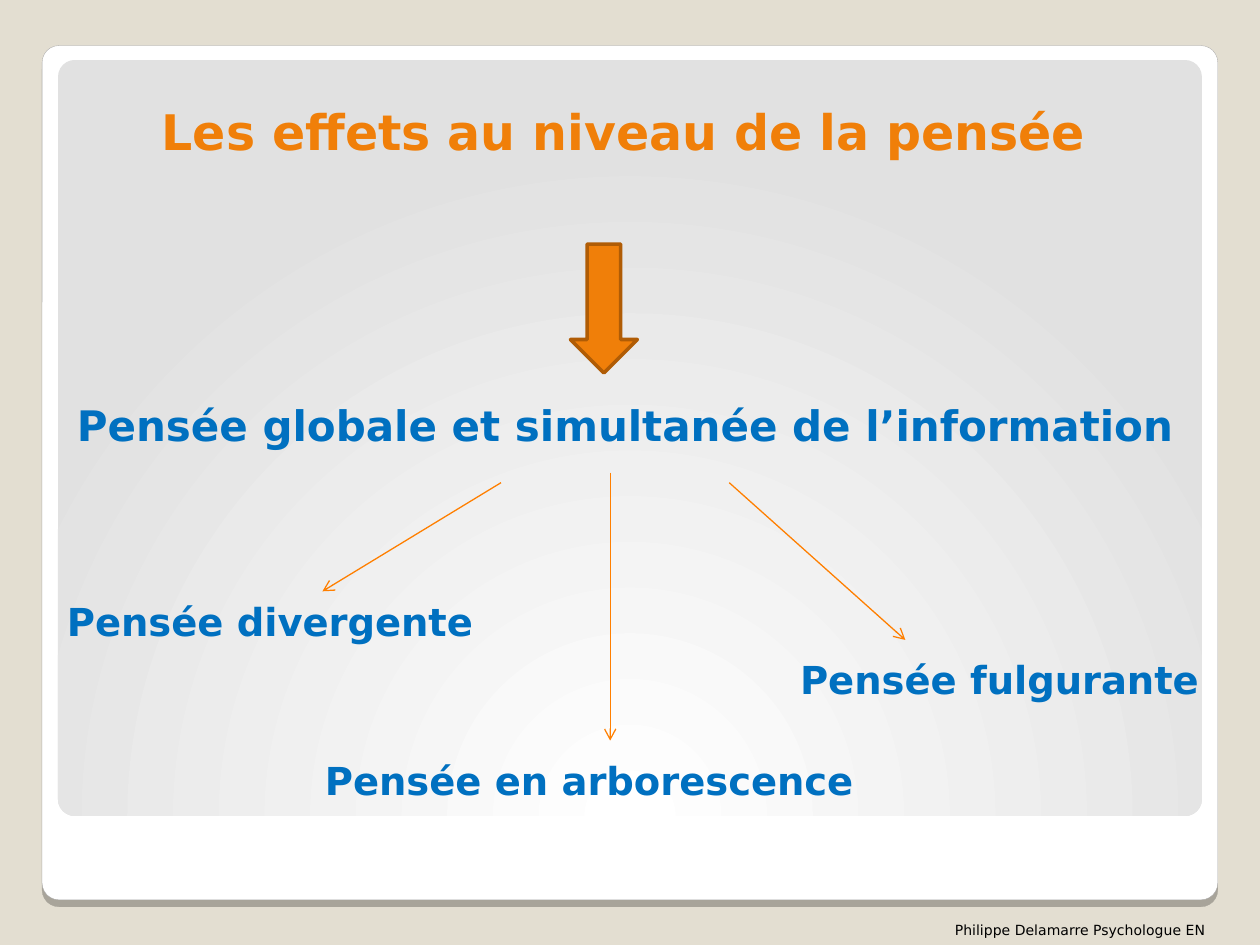
"""Build a slide on the effects on thinking, with one idea leading to three."""
from dataclasses import dataclass

from lxml.etree import SubElement
from pptx import Presentation
from pptx.dml.color import RGBColor
from pptx.enum.shapes import MSO_CONNECTOR as Link, MSO_SHAPE as Preset
from pptx.enum.text import MSO_ANCHOR as Anchor, MSO_AUTO_SIZE as AutoSize, PP_ALIGN as Align
from pptx.oxml.ns import qn
from pptx.util import Cm, Pt


@dataclass(frozen=True)
class Theme:
    """Hold the font, colours and type sizes of the slide."""
    font: str = "DejaVu Sans"
    backdrop: str = "E3DED1"
    frame: str = "FFFFFF"
    frame_edge: str = "A4A3A3"
    frame_shadow: str = "000000"
    panel_edge: str = "E1E1E1"
    accent: str = "F07F09"
    accent_edge: str = "B05C05"
    branch: str = "FF7F00"
    idea: str = "0070C0"
    credit: str = "000000"
    title_size: int = 28
    main_size: int = 24
    idea_size: int = 22
    credit_size: int = 8


THEME = Theme()
CORNER = 0.34


def rgb(value):
    """Turn a hex string into a colour."""
    return RGBColor.from_string(value)


def add_xml(parent, tag, **attributes):
    """Append a DrawingML element and return it."""
    return SubElement(parent, qn(tag), {key: str(value) for key, value in attributes.items()})


def place(shape, box):
    """Move and size a shape to a box in centimetres."""
    shape.left, shape.top, shape.width, shape.height = map(Cm, box)


def write(shape, text, *, size, color, bold=True, align=Align.LEFT, anchor=Anchor.TOP):
    """Put one formatted paragraph into a shape."""
    frame = shape.text_frame
    frame.word_wrap = True
    frame.auto_size = AutoSize.NONE
    frame.vertical_anchor = anchor
    paragraph = frame.paragraphs[0]
    paragraph.alignment = align
    run = paragraph.add_run()
    run.text = text
    run.font.name, run.font.size, run.font.bold = THEME.font, Pt(size), bold
    run.font.color.rgb = rgb(color)


def add_label(slide, text, box, **style):
    """Add a text box with one formatted line."""
    label = slide.shapes.add_textbox(*map(Cm, box))
    write(label, text, **style)


def add_preset(slide, preset, box, fill, edge=None, edge_width=0):
    """Add a filled preset shape with an optional outline."""
    shape = slide.shapes.add_shape(preset, *map(Cm, box))
    shape.shadow.inherit = False
    shape.fill.solid()
    shape.fill.fore_color.rgb = rgb(fill)
    if edge:
        shape.line.color.rgb = rgb(edge)
        shape.line.width = Pt(edge_width)
    else:
        shape.line.fill.background()
    return shape


def add_panel(slide, box, fill, **outline):
    """Add a rounded panel with the common corner radius."""
    panel = add_preset(slide, Preset.ROUNDED_RECTANGLE, box, fill, **outline)
    panel.adjustments[0] = CORNER / min(box[2:])
    return panel


def drop_shadow(shape):
    """Give a shape a hard shadow straight below it."""
    effects = shape.element.spPr.find(qn("a:effectLst"))
    shadow = add_xml(effects, "a:outerShdw", blurRad=0, dist=Pt(4), dir=5400000,
                     algn="tl", rotWithShape=0)
    add_xml(add_xml(shadow, "a:srgbClr", val=THEME.frame_shadow), "a:alpha", val=25000)


def glow_from_below(shape, inner, outer):
    """Fill a shape with a circular gradient centred below it."""
    shape.fill.gradient()
    for stop, color in zip(shape.fill.gradient_stops, (inner, outer)):
        stop.color.rgb = rgb(color)
    gradient = shape.element.spPr.find(qn("a:gradFill"))
    gradient.remove(gradient.find(qn("a:lin")))
    circle = add_xml(gradient, "a:path", path="circle")
    add_xml(circle, "a:fillToRect", l=50000, t=175000, r=50000, b=-75000)


def add_branch(slide, start, end):
    """Add a thin arrow between two points."""
    branch = slide.shapes.add_connector(Link.STRAIGHT, *map(Cm, (*start, *end)))
    branch.line.color.rgb = rgb(THEME.branch)
    branch.line.width = Pt(0.75)
    properties = branch.element.spPr
    add_xml(properties.find(qn("a:ln")), "a:tailEnd", type="arrow")
    add_xml(properties, "a:effectLst")


def add_background(slide):
    """Paint the backdrop, the white frame and the grey panel."""
    slide.background.fill.solid()
    slide.background.fill.fore_color.rgb = rgb(THEME.backdrop)
    frame = add_panel(slide, (0.85, 0.92, 23.7, 17.22), THEME.frame,
                      edge=THEME.frame_edge, edge_width=0.16)
    drop_shadow(frame)
    panel = add_panel(slide, (1.17, 1.21, 23.06, 15.24), THEME.frame)
    glow_from_below(panel, THEME.frame, THEME.panel_edge)


def add_title(slide, text):
    """Fill the title placeholder and bring it in front of the panels."""
    title = slide.shapes.title
    place(title, (1.3, 1.71, 22.53, 1.65))
    write(title, text, size=THEME.title_size, color=THEME.accent,
          align=Align.CENTER, anchor=Anchor.BOTTOM)
    slide.shapes.element.append(title.element)


def main():
    """Build and save the slide."""
    deck = Presentation()
    deck.slide_width, deck.slide_height = Cm(25.4), Cm(19.05)
    slide = deck.slides.add_slide(deck.slide_layouts[5])
    add_background(slide)
    add_title(slide, "Les effets au niveau de la pensée")
    add_preset(slide, Preset.DOWN_ARROW, (11.5, 4.92, 1.35, 2.6), THEME.accent,
               edge=THEME.accent_edge, edge_width=2)

    branches = (
        ((10.1, 9.73), (6.5, 11.92)),
        ((14.7, 9.73), (18.25, 12.9)),
        ((12.3, 9.53), (12.3, 14.93)),
    )
    for start, end in branches:
        add_branch(slide, start, end)

    add_label(slide, "Pensée globale et simultanée de l’information",
              (1.3, 7.93, 23.01, 1.27), size=THEME.main_size, color=THEME.idea)
    ideas = (
        ("Pensée divergente", (1.1, 11.93, 10.6, 1.2)),
        ("Pensée fulgurante", (15.88, 13.1, 8.74, 1.2)),
        ("Pensée en arborescence", (6.3, 15.13, 13, 1.2)),
    )
    for text, box in ideas:
        add_label(slide, text, box, size=THEME.idea_size, color=THEME.idea)
    add_label(slide, "Philippe Delamarre Psychologue EN", (19, 18.45, 6.4, 0.6),
              size=THEME.credit_size, color=THEME.credit, bold=False)
    deck.save("out.pptx")


if __name__ == "__main__":
    main()
